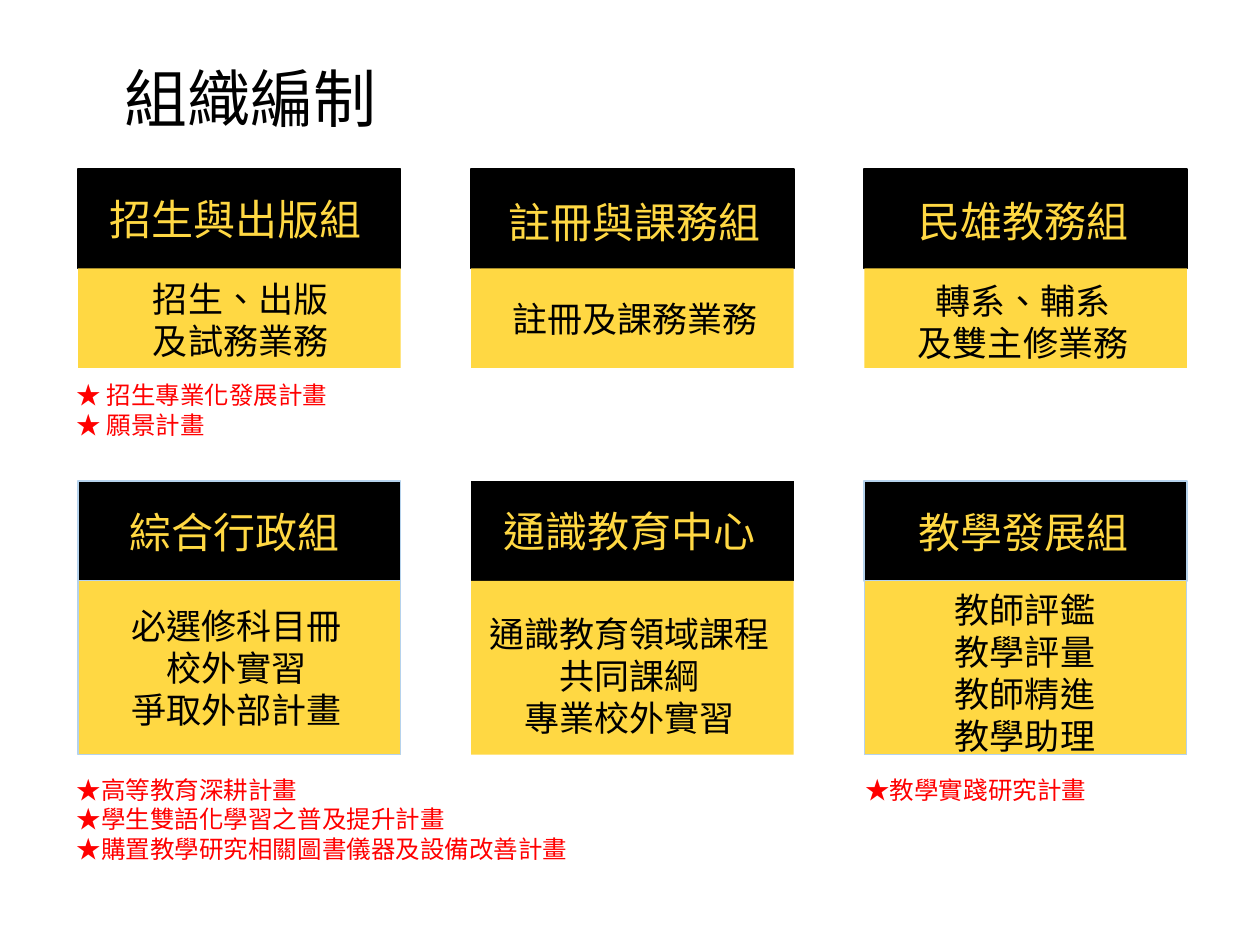
"""Build the organisation chart slide of an academic affairs office."""
from dataclasses import dataclass
from typing import Optional

from lxml.etree import SubElement
from pptx import Presentation
from pptx.dml.color import RGBColor
from pptx.enum.shapes import MSO_SHAPE as Shape
from pptx.enum.text import MSO_ANCHOR as Anchor, MSO_AUTO_SIZE as AutoSize, PP_ALIGN as Align
from pptx.oxml.ns import qn
from pptx.util import Inches, Pt


@dataclass(frozen=True)
class Theme:
    """Colours, type sizes and the typeface of the slide."""
    font: str = "Noto Sans CJK SC"
    black: str = "000000"
    yellow: str = "FFD843"
    red: str = "FF0000"
    pale_blue: str = "B5D2EC"
    title: float = 36
    heading: float = 24
    body: float = 20
    note: float = 14


THEME = Theme()
CARD_WIDTH, HEAD_HEIGHT = 2.56, 0.79
COLUMNS = [0.62 + 3.12 * column for column in range(3)]
ROWS = [1.34, 3.82]
BODY_HEIGHTS = [0.79, 1.38]


@dataclass(frozen=True)
class Label:
    """Lines of text and the box that holds them, in inches."""
    at: tuple[float, float, float, float]
    lines: tuple[str, ...]
    align: Align = Align.LEFT


@dataclass(frozen=True)
class Card:
    """A unit with its grid place, heading and duties."""
    column: int
    row: int
    heading: Label
    duties: Label
    head_line: Optional[str] = None
    body_line: Optional[str] = None


CARDS = [
    Card(0, 0, Label((0.77, 1.49, 2.25, 0.5), ("招生與出版組",)),
         Label((1.1, 2.15, 1.62, 0.77), ("招生、出版", "及試務業務"), Align.CENTER), THEME.black),
    Card(1, 0, Label((3.94, 1.51, 2.22, 0.5), ("註冊與課務組",)),
         Label((3.97, 2.31, 2.17, 0.44), ("註冊及課務業務",)), THEME.black),
    Card(2, 0, Label((7.19, 1.5, 1.88, 0.5), ("民雄教務組",)),
         Label((7.18, 2.17, 1.88, 0.77), ("轉系、輔系", "及雙主修業務"), Align.CENTER), THEME.black),
    Card(0, 1, Label((0.93, 3.97, 1.88, 0.5), ("綜合行政組",)),
         Label((0.6, 4.75, 2.55, 1.12), ("必選修科目冊", "校外實習", "爭取外部計畫"), Align.CENTER),
         THEME.pale_blue, THEME.pale_blue),
    Card(2, 1, Label((7.19, 3.97, 1.88, 0.5), ("教學發展組",)),
         Label((7.48, 4.62, 1.32, 1.45), ("教師評鑑", "教學評量", "教師精進", "教學助理")),
         THEME.pale_blue, THEME.pale_blue),
    Card(1, 1, Label((3.9, 3.96, 2.22, 0.5), ("通識教育中心",)),
         Label((3.77, 4.81, 2.45, 1.11), ("通識教育領域課程", "共同課綱", "專業校外實習"), Align.CENTER)),
]
NOTES = [
    Label((0.51, 2.97, 2.21, 0.57), ("★ 招生專業化發展計畫", "★ 願景計畫")),
    Label((0.51, 6.1, 4.13, 0.81),
          ("★高等教育深耕計畫", "★學生雙語化學習之普及提升計畫", "★購置教學研究相關圖書儀器及設備改善計畫")),
    Label((6.77, 6.1, 1.97, 0.34), ("★教學實踐研究計畫",)),
]


def apply(target, formats: dict) -> None:
    """Set each named attribute of the target."""
    for name, value in formats.items():
        setattr(target, name, value)


def write_lines(box, label: Label, size: float, color: str) -> None:
    """Fill a box with evenly spaced lines in the slide's typeface."""
    apply(box.text_frame, {
        "word_wrap": False, "auto_size": AutoSize.NONE, "vertical_anchor": Anchor.TOP,
        "margin_left": Inches(0.1), "margin_right": Inches(0.1),
        "margin_top": Inches(0.05), "margin_bottom": Inches(0.05),
    })
    for index, line in enumerate(label.lines):
        para = box.text_frame.add_paragraph() if index else box.text_frame.paragraphs[0]
        apply(para, {"alignment": label.align, "line_spacing": Pt(1.2 * size), "space_before": Pt(0)})
        span = para.add_run()
        span.text = line
        span.font.color.rgb = RGBColor.from_string(color)
        apply(span.font, {"name": THEME.font, "size": Pt(size), "bold": False})
        properties = span.font._element
        properties.set("lang", "zh-TW")
        SubElement(properties, qn("a:ea")).set("typeface", THEME.font)


def add_label(page, label: Label, size: float, color: str) -> None:
    """Add a text box."""
    box = page.shapes.add_textbox(*map(Inches, label.at))
    write_lines(box, label, size, color)


def add_panel(page, kind: Shape, at: tuple, fill: str, line: Optional[str], weight: float) -> None:
    """Add a flat filled panel with an optional outline."""
    panel = page.shapes.add_shape(kind, *map(Inches, at))
    panel.shadow.inherit = False
    panel.fill.solid()
    panel.fill.fore_color.rgb = RGBColor.from_string(fill)
    if line:
        panel.line.color.rgb = RGBColor.from_string(line)
        panel.line.width = Pt(weight)
    else:
        panel.line.fill.background()


def add_card(page, card: Card) -> None:
    """Draw one unit: heading panel above duties panel."""
    left, top = COLUMNS[card.column], ROWS[card.row]
    add_panel(page, Shape.FLOWCHART_PROCESS, (left, top, CARD_WIDTH, HEAD_HEIGHT),
              THEME.black, card.head_line, 1)
    add_label(page, card.heading, THEME.heading, THEME.yellow)
    add_panel(page, Shape.RECTANGLE, (left, top + HEAD_HEIGHT, CARD_WIDTH, BODY_HEIGHTS[card.row]),
              THEME.yellow, card.body_line, 0.75)
    add_label(page, card.duties, THEME.body, THEME.black)


def add_title(page, label: Label) -> None:
    """Place and format the title placeholder."""
    title = page.shapes.title
    apply(title, dict(zip(("left", "top", "width", "height"), map(Inches, label.at))))
    write_lines(title, label, THEME.title, THEME.black)


def main() -> None:
    """Build and save the deck."""
    deck = Presentation()
    apply(deck, {"slide_width": Inches(10), "slide_height": Inches(7.5)})
    page = deck.slides.add_slide(deck.slide_layouts[5])
    add_title(page, Label((0.89, 0.42, 2.22, 0.71), ("組織編制",)))
    for card in CARDS:
        add_card(page, card)
    for note in NOTES:
        add_label(page, note, THEME.note, THEME.red)
    deck.save("out.pptx")


if __name__ == "__main__":
    main()
